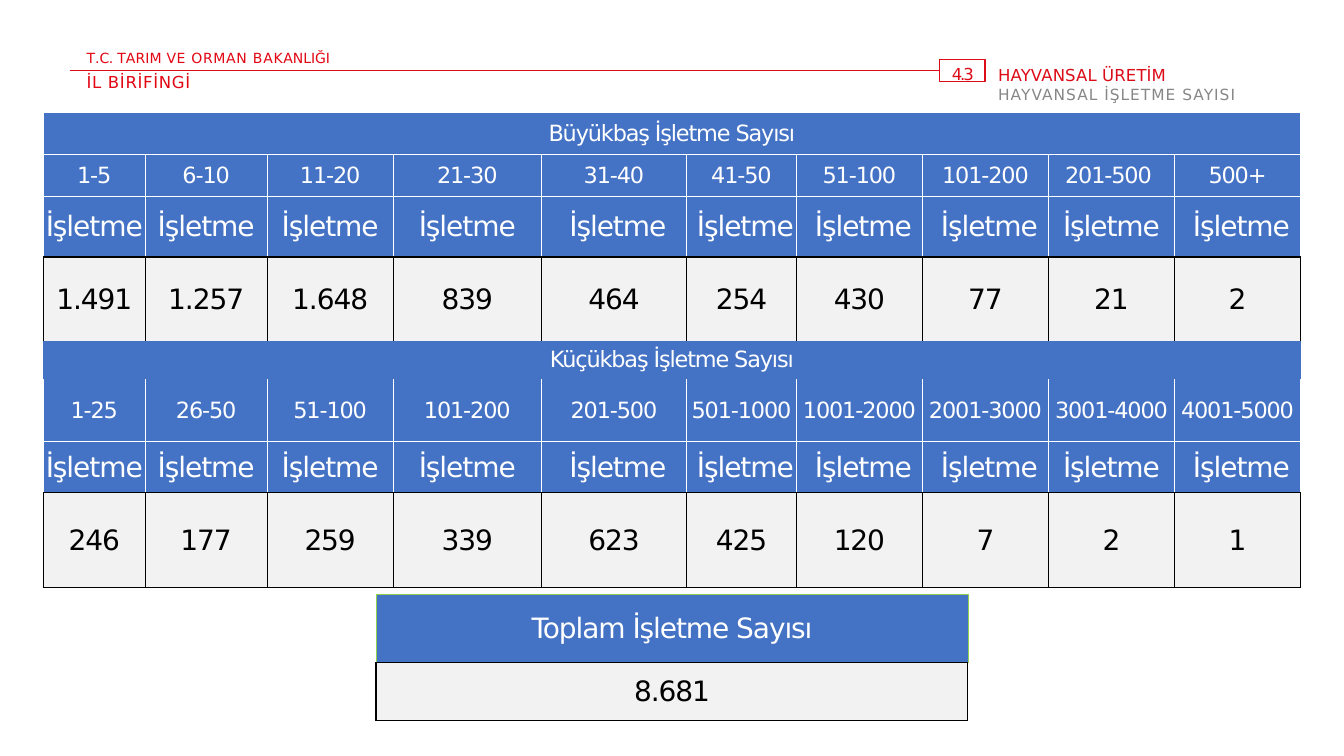
"""Build the livestock holdings slide with its header and two tables."""
from dataclasses import dataclass
from typing import Any

from lxml.etree import SubElement
from pptx import Presentation
from pptx.dml.color import RGBColor
from pptx.enum.shapes import MSO_CONNECTOR, MSO_SHAPE
from pptx.enum.text import MSO_ANCHOR, MSO_AUTO_SIZE, PP_ALIGN
from pptx.oxml.ns import qn
from pptx.util import Inches, Pt

HUES = {"red": "E30613", "crimson": "DC0C18", "grey": "878787", "blue": "4472C4",
        "pale": "F2F2F2", "white": "FFFFFF", "black": "000000", "green": "92D050"}
FACE = "DejaVu Sans"
FRAME = {"word_wrap": True, "auto_size": MSO_AUTO_SIZE.NONE, "vertical_anchor": MSO_ANCHOR.TOP,
         "margin_left": Inches(0.01), "margin_top": Inches(0.02), "margin_right": 0, "margin_bottom": 0}
CELL = {"vertical_anchor": MSO_ANCHOR.MIDDLE, "margin_left": Inches(0.01),
        "margin_top": Inches(0.01), "margin_right": Inches(0.01), "margin_bottom": 0}
PLAIN = {"first_row": False, "horz_banding": False}
THIN, THICK, LEAF = ("white", 0.5), ("black", 1), ("green", 0.5)
Edges = dict[str, tuple[str, float]]
BOX = dict.fromkeys("LRTB", THICK)
GRID = dict.fromkeys("LRTB", THIN)


@dataclass
class Line:
    """A paragraph made of text and letter-spacing pairs."""
    runs: list[tuple[str, float]]
    size: float
    hue: str


@dataclass
class Row:
    """A table row with one look for all its cells."""
    texts: list[str]
    high: float
    size: float
    edges: Edges
    fill: str = "blue"
    hue: str = "white"


def color(name: str) -> RGBColor:
    """Look up a colour by name."""
    return RGBColor.from_string(HUES[name])


def style(item: Any, look: dict[str, Any]) -> None:
    """Set every format value on an item."""
    for key, value in look.items():
        setattr(item, key, value)


def write(par: Any, line: Line) -> None:
    """Write the runs of a line into a paragraph."""
    for text, gap in line.runs:
        run = par.add_run()
        run.text = text
        style(run.font, {"size": Pt(line.size), "name": FACE, "bold": False})
        run.font.color.rgb = color(line.hue)
        run.font._element.set("spc", str(round(gap * 100)))


def fill_box(shape: Any, lines: list[Line], look: dict[str, Any]) -> None:
    """Put left-aligned lines into a shape."""
    frame = shape.text_frame
    style(frame, FRAME | look)
    for num, line in enumerate(lines):
        par = frame.add_paragraph() if num else frame.paragraphs[0]
        style(par, {"alignment": PP_ALIGN.LEFT, "space_before": Pt(0.8 if num else 0)})
        write(par, line)


def add_edges(cell: Any, edges: Edges) -> None:
    """Draw the given sides of a cell and clear the others."""
    props = cell._tc.get_or_add_tcPr()
    for side in "LRTB":
        line = SubElement(props, qn(f"a:ln{side}"))
        if side in edges:
            hue, width = edges[side]
            line.set("w", str(Pt(width)))
            paint = SubElement(line, qn("a:solidFill"))
            SubElement(paint, qn("a:srgbClr")).set("val", HUES[hue])
        else:
            SubElement(line, qn("a:noFill"))


def add_grid(slide: Any, left: float, top: float, cols: list[float], rows: list[Row]) -> None:
    """Add a table, merging each row that has a single text."""
    high = sum(row.high for row in rows)
    table = slide.shapes.add_table(len(rows), len(cols), Inches(left), Inches(top),
                                   Inches(sum(cols)), Inches(high)).table
    style(table, PLAIN)
    for col, width in zip(table.columns, cols):
        col.width = Inches(width)
    for num, row in enumerate(rows):
        table.rows[num].height = Inches(row.high)
        for cell in table.rows[num].cells:
            style(cell, CELL)
            add_edges(cell, row.edges)
            cell.fill.solid()
            cell.fill.fore_color.rgb = color(row.fill)
        for pos, text in enumerate(row.texts):
            par = table.cell(num, pos).text_frame.paragraphs[0]
            par.alignment = PP_ALIGN.CENTER
            write(par, Line([(text, -0.8)], row.size, row.hue))
        if len(row.texts) < len(cols):
            table.cell(num, 0).merge(table.cell(num, len(cols) - 1))


def add_head(slide: Any) -> None:
    """Add the ministry lines, the title, the number box and the rule."""
    title = slide.shapes.title
    style(title, {"left": Inches(9.89), "top": Inches(0.62),
                  "width": Inches(3.44), "height": Inches(0.41)})
    fill_box(title, [Line([("HAYVANSAL ÜRETİM", 0.1)], 11.8, "crimson"),
                     Line([("HAYVANSAL İŞLETME SAYISI", 0.7)], 11, "grey")], {})
    office = [("T", -0.7), (".", -1.4), ("C. ", -0.3), ("T", -0.6), ("ARIM ", 0.1),
              ("VE ORMAN ", 0.5), ("BA", 0.6), ("K", 0.4), ("ANLIĞI", 0)]
    for top, high, line in ((0.47, 0.18, Line(office, 10, "red")),
                            (0.69, 0.21, Line([("İL BİRİFİNGİ", 0.5)], 11.8, "red"))):
        box = slide.shapes.add_textbox(Inches(0.85), Inches(top), Inches(2.54), Inches(high))
        fill_box(box, [line], {})
    badge = slide.shapes.add_shape(MSO_SHAPE.RECTANGLE, Inches(9.32), Inches(0.59),
                                   Inches(0.45), Inches(0.22))
    badge.shadow.inherit = False
    badge.fill.background()
    fill_box(badge, [Line([("4 . 3", -2.6)], 11.8, "crimson")],
             {"margin_left": Inches(0.12), "margin_top": Inches(0.05)})
    rule = slide.shapes.add_connector(MSO_CONNECTOR.STRAIGHT, Inches(0.69), Inches(0.7),
                                      Inches(9.32), Inches(0.7))
    rule.end_connect(badge, 1)
    for item in (badge, rule):
        item.line.color.rgb = color("crimson")
        item.line.width = Pt(0.82)
    SubElement(rule._element.spPr, qn("a:effectLst"))


def main() -> None:
    """Build and save the slide."""
    deck = Presentation()
    style(deck, {"slide_width": Inches(13.33), "slide_height": Inches(7.5)})
    slide = deck.slides.add_slide(deck.slide_layouts[5])
    add_head(slide)
    add_grid(slide, 3.73, 5.9, [5.87], [
        Row(["Toplam İşletme Sayısı"], 0.67, 20, dict.fromkeys("LRT", LEAF) | {"B": THICK}),
        Row(["8.681"], 0.58, 20, BOX, "pale", "black")])
    units = ["İşletme"] * 4 + [" İşletme"] * 4 + ["İşletme", " İşletme"]
    cattle = ["1-5", "6-10", "11-20", "21-30", "31-40", "41-50", "51-100", "101-200", "201-500 ", "500+"]
    sheep = ["1-25", "26-50", "51-100", "101-200", "201-500", "501-1000",
             "1001-2000", "2001-3000", "3001-4000", "4001-5000"]
    herds = ["1.491", "1.257", "1.648", "839", "464", "254", "430", "77", "21", "2"]
    flocks = ["246", "177", "259", "339", "623", "425", "120", "7", "2", "1"]
    add_grid(slide, 0.43, 1.11, [1.01, 1.21, 1.25, 1.47, 1.44, 1.09] + [1.25] * 4, [
        Row(["Büyükbaş İşletme Sayısı"], 0.42, 16, GRID),
        Row(cattle, 0.42, 16, GRID),
        Row(units, 0.6, 20, GRID | {"B": THICK}),
        Row(herds, 0.83, 20, dict.fromkeys("LRT", THICK), "pale", "black"),
        Row(["Küçükbaş İşletme Sayısı"], 0.38, 16, {}),
        Row(sheep, 0.62, 16, dict.fromkeys("LRB", THIN)),
        Row(units, 0.51, 20, GRID | {"B": THICK}),
        Row(flocks, 0.94, 20, BOX, "pale", "black")])
    deck.save("out.pptx")


if __name__ == "__main__":
    main()
